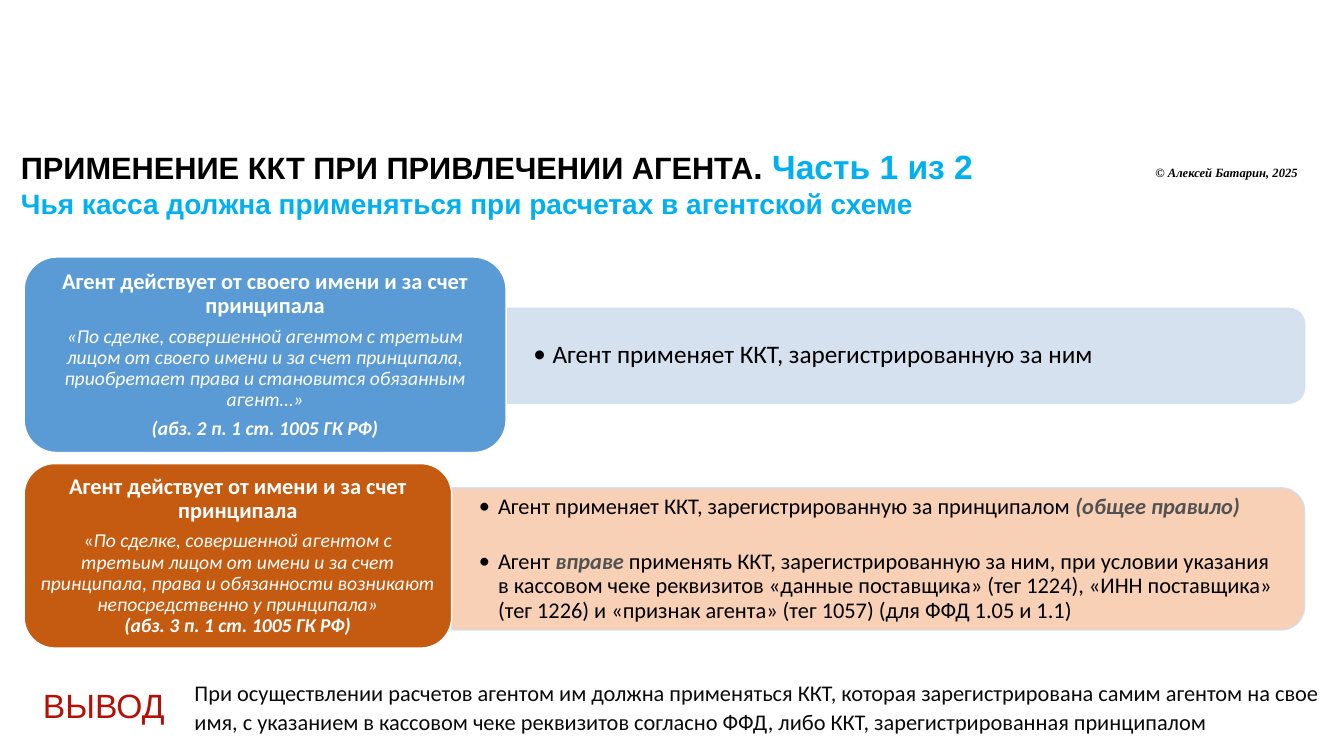
from lxml import etree
from pptx import Presentation
from pptx import util as u
from pptx.dml.color import RGBColor
from pptx.enum import shapes, text
from pptx.oxml.ns import qn

SLIDE_W, SLIDE_H = 13.33, 7.5
BLACK, WHITE, GREY = "000000", "FFFFFF", "525252"
SKY, RED, BORDER = "00B0F0", "B50F08", "D2DEEF"
CARD_LEFT, TAB_RIGHT = 1.8, 97.07


def rgb(code):
    return RGBColor.from_string(code)


def area(left, top, width, height):
    """Turn percentages of the slide's size into lengths."""
    return (u.Inches(left * SLIDE_W / 100), u.Inches(top * SLIDE_H / 100),
            u.Inches(width * SLIDE_W / 100), u.Inches(height * SLIDE_H / 100))


def set_frame(frame, insets, anchor=text.MSO_ANCHOR.TOP, wrap=True):
    frame.word_wrap = wrap
    frame.vertical_anchor = anchor
    frame.margin_left, frame.margin_top, frame.margin_right, frame.margin_bottom = (
        u.Inches(inset) for inset in insets)


def add_bullet(paragraph):
    props = paragraph._p.get_or_add_pPr()
    indent = u.Inches(0.19)
    props.set("marL", str(indent))
    props.set("indent", str(-indent))
    etree.SubElement(props, qn("a:buFont")).set("typeface", "Calibri")
    etree.SubElement(props, qn("a:buChar")).set("char", "•")


def write(frame, paragraphs, font, align=text.PP_ALIGN.LEFT, spacing=1.0,
          after=0, gap=0, bullets=False):
    """Fill a frame; each paragraph is a list of (words, size, colour, style).

    The style holds "b" for bold and "i" for italic; after is a share of the
    text size, and gap is the extra space between paragraphs in points.
    """
    for index, pieces in enumerate(paragraphs):
        paragraph = frame.add_paragraph() if index else frame.paragraphs[0]
        if bullets:
            add_bullet(paragraph)
        paragraph.alignment = align
        paragraph.line_spacing = spacing
        paragraph.space_after = u.Pt(round(after * pieces[0][1], 1))
        if index and gap:
            paragraph.space_before = u.Pt(gap)
        for words, size, colour, style in pieces:
            if words == "\n":
                paragraph.add_line_break()
                continue
            run = paragraph.add_run()
            run.text = words
            run.font.name = font
            run.font.size = u.Pt(size)
            run.font.color.rgb = rgb(colour)
            run.font.bold = "b" in style
            run.font.italic = "i" in style


def add_label(slide, place, paragraphs, font, wrap=True, **layout):
    frame = slide.shapes.add_textbox(*area(*place)).text_frame
    set_frame(frame, (0.1, 0.05, 0.1, 0.05), wrap=wrap)
    write(frame, paragraphs, font, **layout)


def paint(shape, fill, line):
    shape.shadow.inherit = False
    shape.fill.solid()
    shape.fill.fore_color.rgb = rgb(fill)
    shape.line.color.rgb = rgb(line)
    shape.line.width = u.Pt(1)


def add_card(slide, place, fill, paragraphs):
    card = slide.shapes.add_shape(shapes.MSO_SHAPE.ROUNDED_RECTANGLE, *area(*place))
    paint(card, fill, WHITE)
    set_frame(card.text_frame, (0.07, 0.03, 0.07, 0.03), text.MSO_ANCHOR.MIDDLE)
    write(card.text_frame, paragraphs, "Calibri", text.PP_ALIGN.CENTER, 0.9, 0.35)


def add_tab(slide, place, fill, paragraphs):
    """Add a bar rounded on its right side, with bulleted text over it."""
    left, top, width, height = area(*place)
    shift = (width - height) // 2
    tab = slide.shapes.add_shape(shapes.MSO_SHAPE.ROUND_2_SAME_RECTANGLE,
                                 left + shift, top - shift, height, width)
    tab.rotation = 90
    paint(tab, fill, BORDER)
    for colour in tab._element.spPr.iter(qn("a:srgbClr")):
        etree.SubElement(colour, qn("a:alpha")).set("val", "90000")
    frame = slide.shapes.add_textbox(left, top, width, height).text_frame
    set_frame(frame, (0.27, 0, 0.32, 0), text.MSO_ANCHOR.MIDDLE)
    write(frame, paragraphs, "Calibri", spacing=0.9, after=0.15, gap=20, bullets=True)


def add_case(slide, card_span, card_fill, rule, tab_span, tab_fill, outcome):
    """Add one row: a card with the rule of law and a tab with its outcome."""
    card_top, card_width, card_height = card_span
    tab_top, tab_height = tab_span
    tab_left = CARD_LEFT + card_width
    add_tab(slide, (tab_left, tab_top, TAB_RIGHT - tab_left, tab_height),
            tab_fill, outcome)
    add_card(slide, (CARD_LEFT, card_top, card_width, card_height), card_fill, rule)


def main():
    deck = Presentation()
    deck.slide_width, deck.slide_height = u.Inches(SLIDE_W), u.Inches(SLIDE_H)
    slide = deck.slides.add_slide(deck.slide_layouts[6])

    add_label(slide, (0.82, 18.67, 73.14, 8.27), [
        [("ПРИМЕНЕНИЕ ККТ ПРИ ПРИВЛЕЧЕНИИ АГЕНТА", 22, BLACK, "b"),
         (". ", 24, BLACK, "b"), ("Часть 1 из 2", 24, SKY, "b")],
        [("Чья касса должна применяться при расчетах в агентской схеме", 20, SKY, "b")],
    ], "Arial")
    add_label(slide, (85.22, 21.2, 13.73, 3.33),
              [[("© Алексей Батарин, 2025", 9, BLACK, "bi")]], "Times New Roman")

    own_name_rule = [
        [("Агент действует от своего имени и за счет принципала", 16, WHITE, "b")],
        [("«По сделке, совершенной агентом с третьим лицом от своего имени и за счет "
          "принципала, приобретает права и становится обязанным агент…»",
          14, WHITE, "i")],
        [("(абз. 2 п. 1 ст. 1005 ГК РФ)", 14, WHITE, "bi")],
    ]
    own_name_outcome = [
        [("Агент применяет ККТ, зарегистрированную за ним", 18, BLACK, "")],
    ]
    add_case(slide, (34, 35.86, 25.87), "5B9BD5", own_name_rule,
             (40.8, 12.53), "D2DEEF", own_name_outcome)

    principal_rule = [
        [("Агент действует от имени и за счет принципала", 16, WHITE, "b")],
        [("«", 14, WHITE, ""),
         ("По сделке, совершенной агентом с третьим лицом от имени и за счет "
          "принципала, права и обязанности возникают непосредственно у принципала»",
          14, WHITE, "i"),
         ("\n", 14, WHITE, ""),
         ("(абз. 3 п. 1 ст. 1005 ГК РФ)", 14, WHITE, "bi")],
    ]
    principal_outcome = [
        [("Агент применяет ККТ, зарегистрированную за принципалом ", 16, BLACK, ""),
         ("(общее правило)", 16, GREY, "bi")],
        [("Агент ", 16, BLACK, ""), ("вправе ", 16, GREY, "bi"),
         ("применять ККТ, зарегистрированную за ним, при условии указания в кассовом "
          "чеке реквизитов «данные поставщика» (тег 1224), «ИНН поставщика» (тег 1226) "
          "и «признак агента» (тег 1057) (для ФФД 1.05 и 1.1)", 16, BLACK, "")],
    ]
    add_case(slide, (61.33, 31.81, 24.4), "C55A11", principal_rule,
             (64.53, 18.8), "F8CBAD", principal_outcome)

    add_label(slide, (13.73, 88.93, 85.3, 9.07), [
        [("При осуществлении расчетов агентом им должна применяться ККТ, которая "
          "зарегистрирована самим агентом на свое имя, с указанием в кассовом чеке "
          "реквизитов согласно ФФД, либо ККТ, зарегистрированная принципалом",
          16, "0A0A0A", "")],
    ], "Calibri", spacing=1.07, after=0.38)
    add_label(slide, (2.4, 90, 10.65, 6.8), [[("ВЫВОД", 24, RED, "")]], "Arial",
              wrap=False, align=text.PP_ALIGN.CENTER)

    deck.save("out.pptx")


if __name__ == "__main__":
    main()
